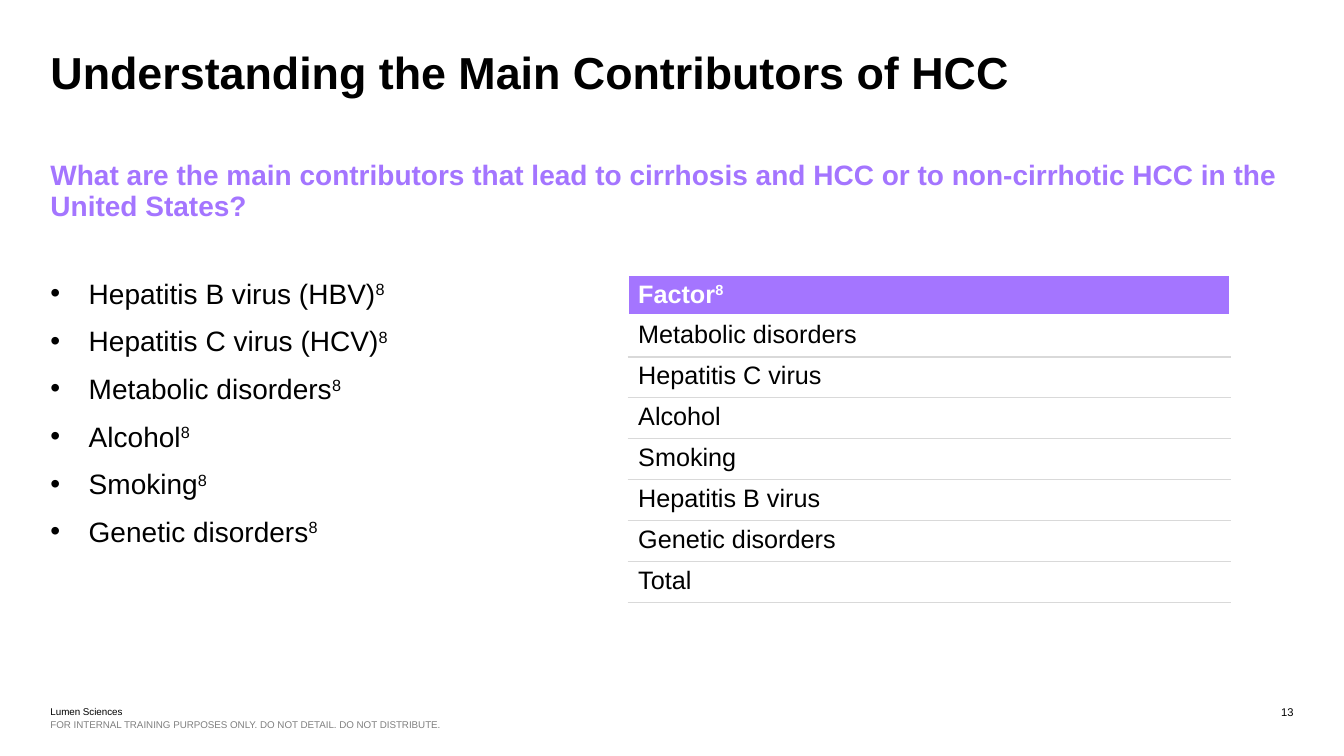
from dataclasses import dataclass

from lxml.etree import SubElement
from pptx import Presentation
from pptx.dml.color import RGBColor
from pptx.enum.text import MSO_ANCHOR, MSO_AUTO_SIZE, PP_ALIGN
from pptx.oxml import parse_xml
from pptx.oxml.ns import nsdecls, qn
from pptx.util import Pt

PX = 9144  # 100 px to the inch


@dataclass(frozen=True)
class Theme:
    font: str = "Arial"
    black: str = "000000"
    white: str = "FFFFFF"
    purple: str = "A475FF"
    grey: str = "808080"
    rule: str = "D9D9D9"
    title: int = 32
    body: int = 20
    table: int = 18
    number: int = 8
    footer: int = 7
    superscript: int = 30000


THEME = Theme()
REFERENCE = "8"
CAUSES = ["Hepatitis B virus (HBV)", "Hepatitis C virus (HCV)", "Metabolic disorders",
          "Alcohol", "Smoking", "Genetic disorders"]
FACTORS = ["Metabolic disorders", "Hepatitis C virus", "Alcohol", "Smoking",
           "Hepatitis B virus", "Genetic disorders", "Total"]


def add_span(para, text, size, color=THEME.black, bold=False, raised=False):
    span = para.add_run()
    span.text = text
    span.font.name = THEME.font
    span.font.size = Pt(size)
    span.font.bold = bold
    span.font.color.rgb = RGBColor.from_string(color)
    if raised:
        span.font._element.set("baseline", str(THEME.superscript))


def add_cited(para, text, size, **style):
    """Add text followed by the raised reference number."""
    add_span(para, text, size, **style)
    add_span(para, REFERENCE, size, raised=True, **style)


def set_bullet(para, indent=0):
    """Give a bullet with a hanging indent, or none when indent is 0."""
    properties = para._p.get_or_add_pPr()
    properties.set("marL", str(indent * PX))
    properties.set("indent", str(-indent * PX))
    if indent:
        SubElement(properties, qn("a:buFont"), typeface=THEME.font)
        SubElement(properties, qn("a:buChar"), char="•")
    else:
        SubElement(properties, qn("a:buNone"))


def prepare_frame(shape, box):
    """Place the shape and return its frame, top-anchored without insets."""
    shape.left, shape.top, shape.width, shape.height = (n * PX for n in box)
    frame = shape.text_frame
    frame.margin_left = frame.margin_top = frame.margin_right = frame.margin_bottom = 0
    frame.vertical_anchor = MSO_ANCHOR.TOP
    frame.word_wrap = True
    frame.auto_size = MSO_AUTO_SIZE.NONE
    return frame


def fill_title(shape, box):
    para = prepare_frame(shape, box).paragraphs[0]
    para.alignment = PP_ALIGN.LEFT
    para.line_spacing = Pt(34)
    add_span(para, "Understanding the Main Contributors of HCC", THEME.title, bold=True)


def fill_question(shape, box):
    para = prepare_frame(shape, box).paragraphs[0]
    para.line_spacing = Pt(22)
    para.space_before = Pt(10)
    set_bullet(para)
    add_span(para, "What are the main contributors that lead to cirrhosis and HCC "
             "or to non-cirrhotic HCC in the United States?",
             THEME.body, THEME.purple, bold=True)


def fill_causes(shape, box):
    frame = prepare_frame(shape, box)
    for index, cause in enumerate(CAUSES):
        para = frame.add_paragraph() if index else frame.paragraphs[0]
        para.space_before = Pt(10)
        set_bullet(para, 38)
        add_cited(para, cause, THEME.body)


def set_borders(cell, **sides):
    """Draw each side (L, R, T, B) as a (colour, points) pair, or clear it with None."""
    properties = cell._tc.get_or_add_tcPr()
    for position, side in enumerate("LRTB"):
        color, width = sides[side] or (None, 0)
        fill = (f'<a:solidFill><a:srgbClr val="{color}"/></a:solidFill>'
                if color else "<a:noFill/>")
        properties.insert(position, parse_xml(
            f'<a:ln{side} {nsdecls("a")} w="{Pt(width)}">{fill}</a:ln{side}>'))


def add_factor_table(page, box):
    left, top, width, height = (n * PX for n in box)
    rows = len(FACTORS) + 1
    table = page.shapes.add_table(rows, 2, left, top, width, height).table
    table.horz_banding = False
    for row in table.rows:
        row.height = height // rows
    white, rule = (THEME.white, 1), (THEME.rule, 1)
    for column in range(2):
        header = table.cell(0, column)
        header.fill.solid()
        header.fill.fore_color.rgb = RGBColor.from_string(THEME.purple)
        set_borders(header, L=None if column else white, R=white if column else None,
                    T=white, B=(THEME.white, 3))
        for index in range(1, rows):
            cell = table.cell(index, column)
            cell.fill.background()
            set_borders(cell, L=white, R=white, T=rule if index > 1 else (THEME.white, 3),
                        B=rule)
    add_cited(table.cell(0, 0).text_frame.paragraphs[0], "Factor", THEME.table,
              color=THEME.white, bold=True)
    for index, factor in enumerate(FACTORS, start=1):
        add_span(table.cell(index, 0).text_frame.paragraphs[0], factor, THEME.table)


def add_label(page, box, text, size, color=THEME.black, align=PP_ALIGN.LEFT):
    shape = page.shapes.add_textbox(0, 0, 0, 0)
    para = prepare_frame(shape, box).paragraphs[0]
    para.alignment = align
    add_span(para, text, size, color)


def add_footer(page, box):
    left, top, width, height = box
    add_label(page, (left, top, 139, 12), "Lumen Sciences", THEME.footer)
    add_label(page, (left, top + 13, 647, 12),
              "FOR INTERNAL TRAINING PURPOSES ONLY. DO NOT DETAIL. DO NOT DISTRIBUTE.",
              THEME.footer, THEME.grey)
    add_label(page, (left + width - 300, top, 300, height), "13", THEME.number,
              align=PP_ALIGN.RIGHT)


def build_contributors_page(deck, box):
    left, top, width, height = box
    page = deck.slides.add_slide(deck.slide_layouts.get_by_name("Two Content"))
    title, question, causes = page.placeholders
    fill_title(title, (left, top, width, 98))
    fill_question(question, (left, top + 109, width, 58))
    fill_causes(causes, (left, top + 224, width, 426))
    add_factor_table(page, (left + 573, top + 223, 597, 324))
    add_footer(page, (left, top + height - 40, width, 40))


def main():
    deck = Presentation()
    deck.slide_width, deck.slide_height = 1333 * PX, 750 * PX
    build_contributors_page(deck, (50, 50, 1233, 690))
    deck.save("out.pptx")


if __name__ == "__main__":
    main()
